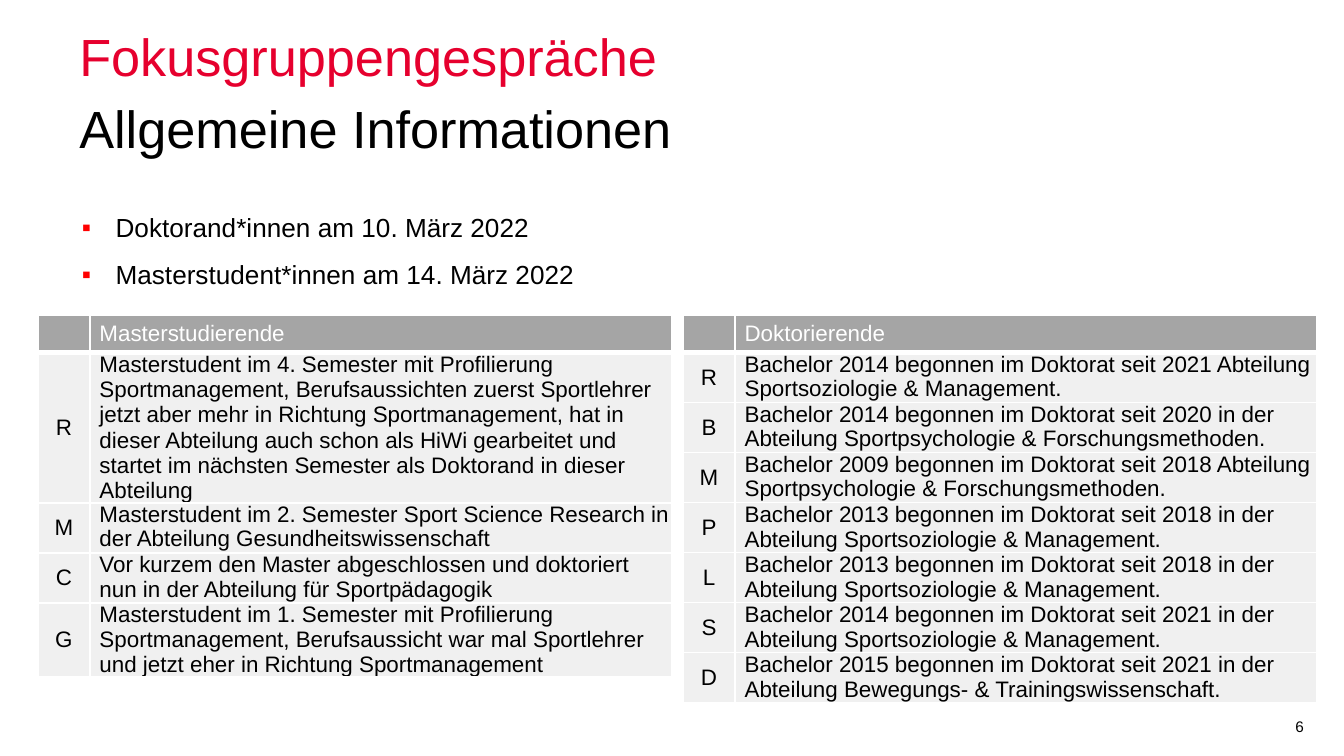
from lxml.etree import SubElement
from pptx import Presentation
from pptx.dml.color import RGBColor
from pptx.enum.text import MSO_ANCHOR, MSO_AUTO_SIZE, PP_ALIGN
from pptx.oxml.ns import qn
from pptx.util import Pt

COLORS = {"title": "E6002E", "text": "000000", "bullet": "FF0000",
          "header": "A5A5A5", "row": "F0F0F0", "white": "FFFFFF"}
FONT = "Arial"
TITLE = "Fokusgruppengespräche"
SUBTITLE = "Allgemeine Informationen"
DATES = ["Doktorand*innen am 10. März 2022", "Masterstudent*innen am 14. März 2022"]
PAGE = "6"

MASTER_GROUP = [
    ("", "Masterstudierende", 20.2, None),
    ("R", "Masterstudent im 4. Semester mit Profilierung Sportmanagement, "
          "Berufsaussichten zuerst Sportlehrer jetzt aber mehr in Richtung "
          "Sportmanagement, hat in dieser Abteilung auch schon als HiWi gearbeitet "
          "und startet im nächsten Semester als Doktorand in dieser Abteilung", 80, None),
    ("M", "Masterstudent im 2. Semester Sport Science Research in der "
          "Abteilung Gesundheitswissenschaft", 26.8, 13),
    ("C", "Vor kurzem den Master abgeschlossen und doktoriert nun in der "
          "Abteilung für Sportpädagogik", 26.8, 13.2),
    ("G", "Masterstudent im 1. Semester mit Profilierung Sportmanagement, "
          "Berufsaussicht war mal Sportlehrer und jetzt eher in Richtung "
          "Sportmanagement", 39.6, 13.2),
]
DOCTORATES = [
    ("R", 2014, 2021, "Abteilung Sportsoziologie & Management."),
    ("B", 2014, 2020, "in der Abteilung Sportpsychologie & Forschungsmethoden."),
    ("M", 2009, 2018, "Abteilung Sportpsychologie & Forschungsmethoden."),
    ("P", 2013, 2018, "in der Abteilung Sportsoziologie & Management."),
    ("L", 2013, 2018, "in der Abteilung Sportsoziologie & Management."),
    ("S", 2014, 2021, "in der Abteilung Sportsoziologie & Management."),
    ("D", 2015, 2021, "in der Abteilung Bewegungs- & Trainingswissenschaft."),
]
DOCTORAL_GROUP = [("", "Doktorierende", 20.2, None)] + [
    (code, f"Bachelor {bachelor} begonnen im Doktorat seit {start} {department}", 26.8, 13.2)
    for code, bachelor, start, department in DOCTORATES]

GROUPS = [(20.2, MASTER_GROUP), (365.8, DOCTORAL_GROUP)]
GROUP_TOP = 168.6
COLUMN_WIDTHS = (28.1, 311.8)


def style_runs(paragraph, size, color):
    for run in paragraph.runs:
        run.font.name = FONT
        run.font.size = Pt(size)
        run.font.bold = False
        run.font.color.rgb = RGBColor.from_string(COLORS[color])


def place(part, left, top, width, height):
    part.left, part.top, part.width, part.height = map(Pt, (left, top, width, height))
    part.text_frame.auto_size = MSO_AUTO_SIZE.NONE
    part.text_frame.word_wrap = True


def fill_heading(heading, text, top, color, anchor):
    place(heading, 42.5, top, 553, 32.4)
    frame = heading.text_frame
    frame.margin_left = frame.margin_right = frame.margin_top = frame.margin_bottom = 0
    frame.vertical_anchor = anchor
    frame.text = text
    line = frame.paragraphs[0]
    line.alignment = PP_ALIGN.LEFT
    line.line_spacing = Pt(32)
    line.space_before = Pt(0)
    properties = line._p.get_or_add_pPr()
    properties.set("marL", "0")
    properties.set("indent", "0")
    SubElement(properties, qn("a:buNone"))
    style_runs(line, 28, color)


def fill_dates(dates):
    place(dates, 36.7, 111.6, 667.4, 254.9)
    dates.text_frame.vertical_anchor = MSO_ANCHOR.TOP
    dates.text_frame.text = "\n".join(DATES)
    for index, date in enumerate(dates.text_frame.paragraphs):
        date.line_spacing = 0.9
        date.space_before = Pt(10 if index else 0)
        properties = date._p.get_or_add_pPr()
        properties.set("marL", str(Pt(18)))
        properties.set("indent", str(Pt(-18)))
        bullet_color = SubElement(properties, qn("a:buClr"))
        SubElement(bullet_color, qn("a:srgbClr"), val=COLORS["bullet"])
        SubElement(properties, qn("a:buFont"), typeface=FONT)
        SubElement(properties, qn("a:buChar"), char="▪")
        style_runs(date, 14, "text")


def add_borders(cell, row):
    widths = {"a:lnL": 1, "a:lnR": 1, "a:lnT": 3 if row == 1 else 1, "a:lnB": 1 if row else 3}
    for side, width in widths.items():
        border = SubElement(cell._tc.get_or_add_tcPr(), qn(side), w=str(Pt(width)))
        SubElement(SubElement(border, qn("a:solidFill")), qn("a:srgbClr"), val=COLORS["white"])


def fill_cell(cell, text, row, column, spacing):
    cell.margin_left = Pt(5 if column else 0)
    cell.margin_right = cell.margin_top = cell.margin_bottom = 0
    cell.vertical_anchor = MSO_ANCHOR.TOP if row and column else MSO_ANCHOR.MIDDLE
    add_borders(cell, row)
    cell.fill.solid()
    cell.fill.fore_color.rgb = RGBColor.from_string(COLORS["row" if row else "header"])
    cell.text = text
    entry = cell.text_frame.paragraphs[0]
    entry.alignment = PP_ALIGN.LEFT if column else PP_ALIGN.CENTER
    entry.line_spacing = Pt(spacing) if spacing else None
    style_runs(entry, 12, "text" if row else "white")
    if not text:
        SubElement(entry._p, qn("a:endParaRPr"), sz="1200")


def add_group(slide, left, members):
    height = sum(member[2] for member in members)
    group = slide.shapes.add_table(len(members), 2, Pt(left), Pt(GROUP_TOP),
                                   Pt(sum(COLUMN_WIDTHS)), Pt(height)).table
    group.first_row = group.horz_banding = False
    for column, width in zip(group.columns, COLUMN_WIDTHS):
        column.width = Pt(width)
    for row, (code, description, row_height, spacing) in enumerate(members):
        group.rows[row].height = Pt(row_height)
        for column, text in enumerate((code, description)):
            fill_cell(group.cell(row, column), text, row, column, spacing)


def main():
    """Build the focus group overview slide."""
    deck = Presentation()
    deck.slide_width, deck.slide_height = Pt(720), Pt(405)
    slide = deck.slides.add_slide(deck.slide_layouts[3])
    title, subtitle, dates = slide.placeholders
    fill_heading(title, TITLE, 14.4, "title", MSO_ANCHOR.BOTTOM)
    fill_heading(subtitle, SUBTITLE, 53.3, "text", MSO_ANCHOR.TOP)
    fill_dates(dates)
    page = slide.shapes.add_textbox(0, 0, 0, 0)
    place(page, 686.9, 380.9, 17.3, 13)
    page.text_frame.text = PAGE
    style_runs(page.text_frame.paragraphs[0], 8.2, "text")
    for left, members in GROUPS:
        add_group(slide, left, members)
    deck.save("out.pptx")


if __name__ == "__main__":
    main()
